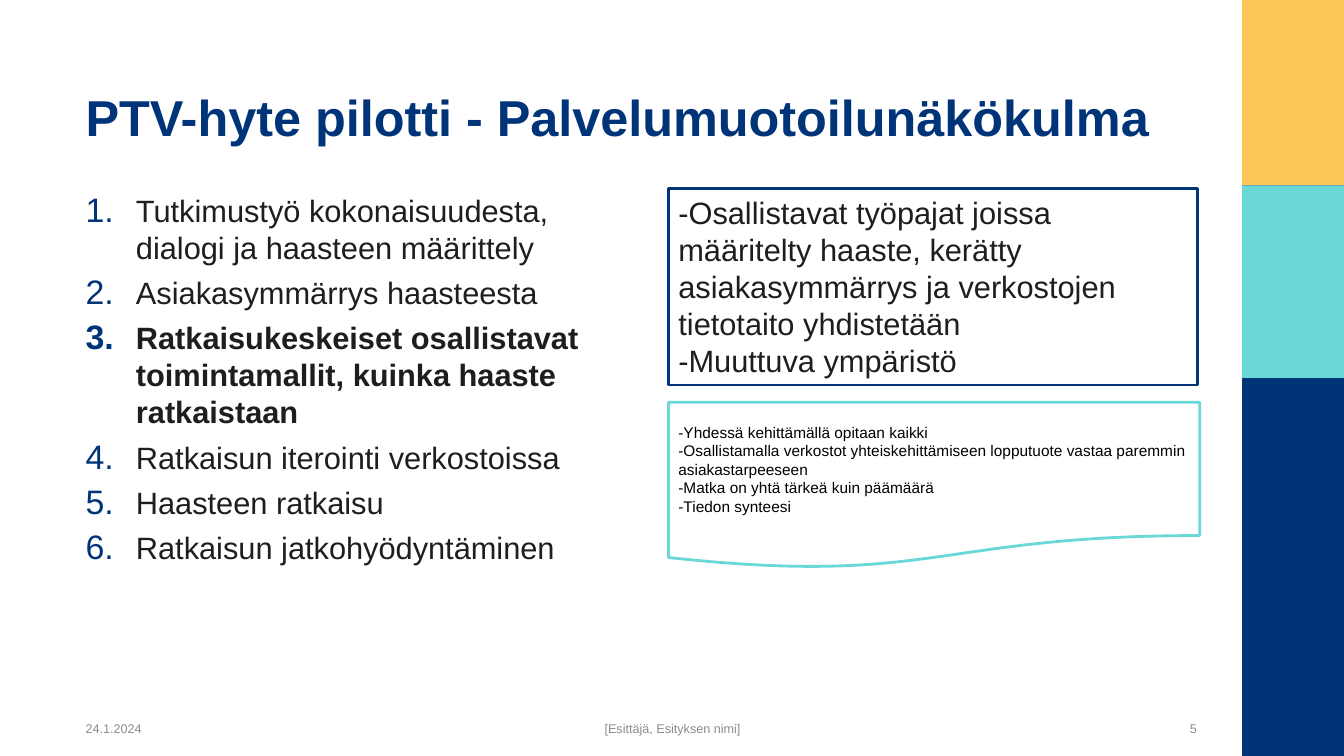
from pptx import Presentation
from pptx.dml.color import RGBColor
from pptx.enum.shapes import MSO_SHAPE
from pptx.enum.text import MSO_ANCHOR, PP_ALIGN
from pptx.oxml.ns import qn
from pptx.util import Inches, Pt
from lxml import etree

RECTANGLE, DOCUMENT = MSO_SHAPE.RECTANGLE, MSO_SHAPE.FLOWCHART_DOCUMENT
TOP, MIDDLE, BOTTOM = MSO_ANCHOR.TOP, MSO_ANCHOR.MIDDLE, MSO_ANCHOR.BOTTOM
LEFT, CENTER, RIGHT = PP_ALIGN.LEFT, PP_ALIGN.CENTER, PP_ALIGN.RIGHT

NAVY, YELLOW, TURQUOISE = "003479", "FFC658", "69D8D7"
WHITE, BLACK, INK, GREY = "FFFFFF", "000000", "1E1E1E", "8C8C8C"


def color(value):
    return RGBColor.from_string(value)


class SlideBuilder:
    font = "Arial"

    def __init__(self, page):
        self.page = page

    def shape(self, kind, place, fill, line=None):
        shape = self.page.shapes.add_shape(kind, *map(Inches, place))
        shape.shadow.inherit = False
        shape.fill.solid()
        shape.fill.fore_color.rgb = color(fill)
        if line:
            shape.line.color.rgb = color(line)
            shape.line.width = Pt(2)
        else:
            shape.line.fill.background()
        return shape

    def set_text(self, box, lines, size, ink, bold=False, align=LEFT, anchor=TOP,
                 number_color=None):
        frame = box.text_frame
        frame.word_wrap = True
        frame.vertical_anchor = anchor
        frame.text = "\n".join(lines)
        for para in frame.paragraphs:
            para.alignment = align
            if number_color:
                self.number(para, number_color)
            para.font.name = self.font
            para.font.size = Pt(size)
            para.font.bold = bold
            para.font.color.rgb = color(ink)
        return frame.paragraphs

    def text(self, place, lines, size, ink, **style):
        box = self.page.shapes.add_textbox(*map(Inches, place))
        return self.set_text(box, lines, size, ink, **style)

    def numbered_list(self, place, items, size, ink, number_color, bold_item):
        paras = self.text(place, items, size, ink, number_color=number_color)
        for para in paras[1:]:
            para.space_before = Pt(6)
        paras[items.index(bold_item)].font.bold = True

    def number(self, para, number_color):
        props = para._p.get_or_add_pPr()
        props.set("marL", str(Inches(0.5)))
        props.set("indent", str(Inches(-0.5)))
        tint = etree.SubElement(props, qn("a:buClr"))
        etree.SubElement(tint, qn("a:srgbClr"), val=number_color)
        etree.SubElement(props, qn("a:buSzPct"), val="110000")
        etree.SubElement(props, qn("a:buFont"), typeface=self.font)
        etree.SubElement(props, qn("a:buAutoNum"), type="arabicPeriod")


def main():
    deck = Presentation()
    deck.slide_width, deck.slide_height = Inches(13.33), Inches(7.5)
    builder = SlideBuilder(deck.slides.add_slide(deck.slide_layouts[6]))

    # Colour band on the right
    for top, height, fill in [(0, 7.5, NAVY), (0, 1.84, YELLOW), (1.84, 1.91, TURQUOISE)]:
        builder.shape(RECTANGLE, (12.32, top, 1.01, height), fill)

    # Title
    builder.text((0.75, 0.16, 11.22, 1.34), ["PTV-hyte pilotti - Palvelumuotoilunäkökulma"],
                 36, NAVY, bold=True, anchor=BOTTOM)

    # Process steps
    current_step = "Ratkaisukeskeiset osallistavat toimintamallit, kuinka haaste ratkaistaan"
    steps = [
        "Tutkimustyö kokonaisuudesta, dialogi ja haasteen määrittely",
        "Asiakasymmärrys haasteesta",
        current_step,
        "Ratkaisun iterointi verkostoissa",
        "Haasteen ratkaisu",
        "Ratkaisun jatkohyödyntäminen",
    ]
    builder.numbered_list((0.75, 1.85, 5.51, 5.04), steps, 22, INK, NAVY, current_step)

    # Workshop box
    workshop = builder.shape(RECTANGLE, (6.63, 1.87, 5.25, 1.95), WHITE, NAVY)
    builder.set_text(workshop, [
        "-Osallistavat työpajat joissa määritelty haaste, kerätty asiakasymmärrys "
        "ja verkostojen tietotaito yhdistetään",
        "-Muuttuva ympäristö",
    ], 22, INK)

    # Lessons box
    lessons = builder.shape(DOCUMENT, (6.63, 3.99, 5.27, 1.65), WHITE, TURQUOISE)
    builder.set_text(lessons, [
        "-Yhdessä kehittämällä opitaan kaikki",
        "-Osallistamalla verkostot yhteiskehittämiseen lopputuote vastaa paremmin "
        "asiakastarpeeseen",
        "-Matka on yhtä tärkeä kuin päämäärä",
        "-Tiedon synteesi",
    ], 11, BLACK, anchor=MIDDLE)

    # Footer
    for left, width, label, align in [
        (0.75, 1.65, "24.1.2024", LEFT),
        (3.49, 6.36, "[Esittäjä, Esityksen nimi]", CENTER),
        (11.06, 0.91, "5", RIGHT),
    ]:
        builder.text((left, 7.11, width, 0.24), [label], 9, GREY, align=align, anchor=MIDDLE)

    deck.save("out.pptx")


if __name__ == "__main__":
    main()
